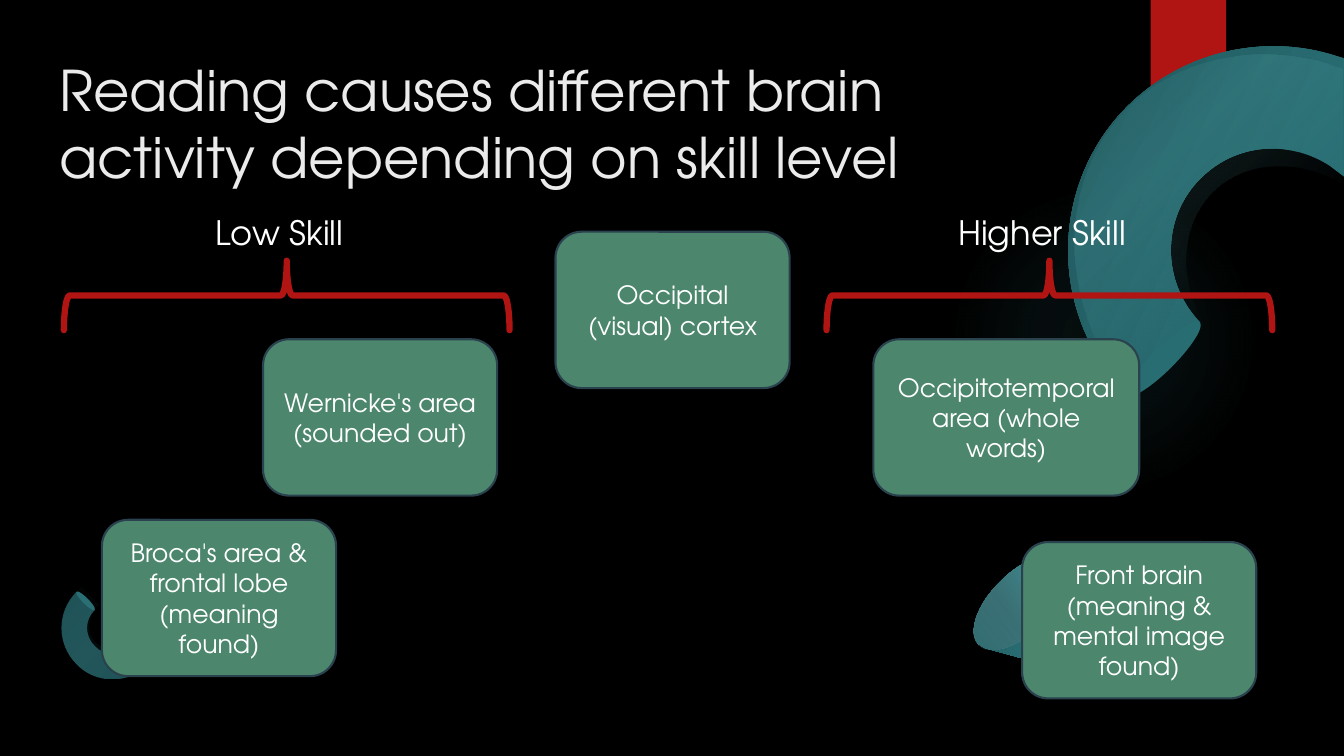
from math import cos, radians, sin

from lxml.etree import SubElement
from pptx import Presentation
from pptx.dml.color import RGBColor
from pptx.enum.shapes import MSO_SHAPE
from pptx.enum.text import MSO_ANCHOR, MSO_AUTO_SIZE, PP_ALIGN
from pptx.oxml.ns import qn
from pptx.util import Cm, Pt

FONT = "TeX Gyre Adventor"
BLACK = RGBColor(0x00, 0x00, 0x00)
WHITE = RGBColor(0xFF, 0xFF, 0xFF)
TITLE = RGBColor(0xEB, 0xEB, 0xEB)
RED = RGBColor(0xB0, 0x15, 0x13)
CORAL = RGBColor(0xED, 0x56, 0x54)
GREEN = RGBColor(0x4B, 0x86, 0x6D)
OUTLINE = RGBColor(0x2A, 0x42, 0x4D)
TEAL = RGBColor(0x28, 0x6D, 0x72)
DARK_TEAL = RGBColor(0x1E, 0x51, 0x55)
MID_TEAL = RGBColor(0x33, 0x89, 0x8F)
BRIGHT_TEAL = RGBColor(0x38, 0x97, 0x9E)
GLOW = RGBColor(0x50, 0xB9, 0xC1)
SHEEN = RGBColor(0x6D, 0xC5, 0xCB)

# Outlines in cm on the slide: a pair is a straight step, six numbers a Bezier curve.
RING = [(28.42, 9.96), (26.42, 7.95, 26.42, 4.67, 28.42, 2.67),
        (29.82, 1.3, 31.8, 0.86, 33.55, 1.37), (33.87, 1.47), (33.87, 4.45),
        (33.5, 4.17), (32.46, 3.51, 31.14, 3.61, 30.25, 4.5),
        (29.26, 5.49, 29.26, 7.11, 30.25, 8.13)]
RING_SHEEN = [(29.06, 10.62), (26.7, 8.28, 26.42, 4.75, 28.42, 2.72),
              (29.69, 1.47, 31.55, 1.12, 33.32, 1.57), (33.83, 1.75), (33.83, 4.62),
              (33.78, 4.62), (32.69, 3.99, 31.37, 4.04, 30.56, 4.85),
              (29.57, 5.87, 29.69, 7.62, 30.86, 8.81)]
CONE = [(27.69, 17.12), (24.82, 16.33), (24.66, 16.23),
        (24.38, 15.95, 24.61, 15.24, 25.2, 14.66),
        (25.78, 14.07, 26.49, 13.82, 26.8, 14.12), (26.87, 14.25)]
HOOK = [(1.93, 16.74), (1.42, 16.23, 1.42, 15.42, 1.93, 14.91), (2.39, 15.37),
        (2.13, 15.62, 2.13, 16.03, 2.39, 16.28),
        (2.62, 16.54, 3.05, 16.54, 3.28, 16.28), (3.73, 16.74),
        (3.25, 17.25, 2.41, 17.25, 1.93, 16.74)]
HOOK_SHEEN = [(1.93, 16.74), (1.42, 16.23, 1.47, 15.37, 2.06, 14.78), (2.51, 15.24),
              (2.21, 15.52, 2.18, 15.98, 2.44, 16.21),
              (2.69, 16.46, 3.12, 16.43, 3.43, 16.15), (3.86, 16.61),
              (3.3, 17.17, 2.41, 17.25, 1.93, 16.74)]

BOX_W, BOX_H = 5.9, 3.94
AREAS = [
    (14, 5.84, BOX_W, "Occipital (visual) cortex"),
    (6.63, 8.55, BOX_W, "Wernicke's area (sounded out)"),
    (2.57, 13.1, BOX_W, "Broca's area & frontal lobe (meaning found)"),
    (22.01, 8.55, 6.7, "Occipitotemporal area (whole words)"),
    (25.76, 13.66, BOX_W, "Front brain (meaning & mental image found)"),
]
SKILLS = [(5.18, 4.06, 6.35, "Low Skill"), (23.9, 5.03, 25.57, "Higher Skill")]


def set_gradient(sp, stops, angle=None):
    """Fill with (position %, colour, opacity %) stops; radial without an angle."""
    sp.fill.gradient()
    grad = sp._element.spPr.find(qn("a:gradFill"))
    for child in list(grad):
        grad.remove(child)
    stop_list = SubElement(grad, qn("a:gsLst"))
    for pos, color, opacity in stops:
        gs = SubElement(stop_list, qn("a:gs"), pos=str(pos * 1000))
        clr = SubElement(gs, qn("a:srgbClr"), val=str(color))
        SubElement(clr, qn("a:alpha"), val=str(opacity * 1000))
    if angle is None:
        radial = SubElement(grad, qn("a:path"), path="circle")
        SubElement(radial, qn("a:fillToRect"), l="50000", t="50000", r="50000", b="50000")
    else:
        SubElement(grad, qn("a:lin"), ang=str(angle * 60000), scaled="0")


def style(sp, fill=None, line=None, width=1.5):
    sp.shadow.inherit = False
    if fill is None:
        sp.fill.background()
    else:
        sp.fill.solid()
        sp.fill.fore_color.rgb = fill
    if line is None:
        sp.line.fill.background()
    else:
        sp.line.color.rgb = line
        sp.line.width = Pt(width)


def add_preset(s, kind, at, rotation=0, **look):
    sp = s.shapes.add_shape(kind, *[Cm(v) for v in at])
    sp.rotation = rotation
    style(sp, **look)
    return sp


def add_outline(s, at, rotation, outline, stops, angle):
    """Draw slide coordinates inside a rotated frame, keeping true curves."""
    left, top, width, height = at
    x0, y0, x1, y1 = [Cm(v) for v in (left, top, left + width, top + height)]
    builder = s.shapes.build_freeform(x0, y0)
    builder.add_line_segments([(x1, y0), (x1, y1), (x0, y1)], close=True)
    sp = builder.convert_to_shape()
    route = next(sp._element.iter(qn("a:path")))
    for child in list(route):
        route.remove(child)
    co, si = cos(radians(rotation)), sin(radians(rotation))
    for i, step in enumerate(outline):
        name = "a:moveTo" if i == 0 else "a:lnTo" if len(step) == 2 else "a:cubicBezTo"
        part = SubElement(route, qn(name))
        for x, y in zip(step[::2], step[1::2]):
            dx, dy = x - left - width / 2, y - top - height / 2
            SubElement(part, qn("a:pt"), x=str(int(Cm(dx * co + dy * si + width / 2))),
                       y=str(int(Cm(dy * co - dx * si + height / 2))))
    SubElement(route, qn("a:close"))
    sp.rotation = rotation
    style(sp)
    set_gradient(sp, stops, angle)


def write(sp, text, size=18, color=WHITE, align=PP_ALIGN.LEFT,
          anchor=MSO_ANCHOR.TOP, wrap=True, inset=None):
    tf = sp.text_frame
    tf.word_wrap = wrap
    tf.vertical_anchor = anchor
    if not wrap:
        tf.auto_size = MSO_AUTO_SIZE.SHAPE_TO_FIT_TEXT
    if inset is not None:
        tf.margin_left = tf.margin_right = tf.margin_top = tf.margin_bottom = Cm(inset)
    p = tf.paragraphs[0]
    p.alignment = align
    r = p.add_run()
    r.text = text
    r.font.name = FONT
    r.font.size = Pt(size)
    r.font.color.rgb = color


def add_text(s, at, text, **fmt):
    write(s.shapes.add_textbox(*[Cm(v) for v in at]), text, **fmt)


def add_decoration(s):
    oval = MSO_SHAPE.OVAL
    halo = add_preset(s, oval, (23.9, 4.65, 7.82, 7.82))
    set_gradient(halo, [(0, GLOW, 7), (36, GLOW, 6), (69, GLOW, 0)])
    add_preset(s, MSO_SHAPE.RECTANGLE, (29, 0, 1.9, 3.18), fill=RED)

    add_outline(s, (25.17, 2.08, 9.83, 5.16), 315, RING,
                [(31, TEAL, 100), (97, DARK_TEAL, 100)], 250)
    add_outline(s, (25.5, 2.08, 9.65, 6.02), 315, RING_SHEEN,
                [(18, SHEEN, 0), (41, SHEEN, 14), (65, SHEEN, 0)], 90)
    add_preset(s, oval, (29.03, 7.75, 0.58, 2.59), 45, fill=TEAL)

    add_outline(s, (24.94, 14.15, 3, 3.5), 135, CONE,
                [(30, TEAL, 100), (40, MID_TEAL, 100),
                 (60, TEAL, 100), (100, DARK_TEAL, 100)], 10)
    cone_end = add_preset(s, oval, (24.97, 13.69, 1.5, 3), 225)
    set_gradient(cone_end, [(0, BRIGHT_TEAL, 33), (100, CORAL, 0)], 90)

    add_outline(s, (1.09, 15.65, 2.57, 1.3), 45, HOOK,
                [(0, DARK_TEAL, 100), (100, DARK_TEAL, 100)], 0)
    add_preset(s, oval, (2.08, 14.81, 0.15, 0.66), 135, fill=TEAL)
    add_outline(s, (1.14, 15.47, 2.57, 1.47), 45, HOOK_SHEEN,
                [(0, SHEEN, 0), (50, SHEEN, 5), (100, SHEEN, 0)], 0)


def main():
    prs = Presentation()
    prs.slide_width, prs.slide_height = Cm(33.87), Cm(19.05)
    s = prs.slides.add_slide(prs.slide_layouts[6])
    s.background.fill.solid()
    s.background.fill.fore_color.rgb = BLACK

    add_decoration(s)
    add_text(s, (1.5, 1.39, 22.12, 4.04),
             "Reading causes different brain activity depending on skill level",
             size=40, color=TITLE, inset=0)
    for left, top, width, text in AREAS:
        box = add_preset(s, MSO_SHAPE.ROUNDED_RECTANGLE, (left, top, width, BOX_H),
                         fill=GREEN, line=OUTLINE)
        write(box, text, align=PP_ALIGN.CENTER, anchor=MSO_ANCHOR.MIDDLE)
    for left, width, brace_left, text in SKILLS:
        brace = add_preset(s, MSO_SHAPE.LEFT_BRACE, (brace_left, 1.83, 1.75, 11.23), 90,
                           line=RED, width=4.5)
        brace._element.spPr.find(qn("a:ln")).set("cap", "rnd")
        add_text(s, (left, 5.21, width, 1.27), text, size=24, wrap=False)
    prs.save("out.pptx")


if __name__ == "__main__":
    main()
